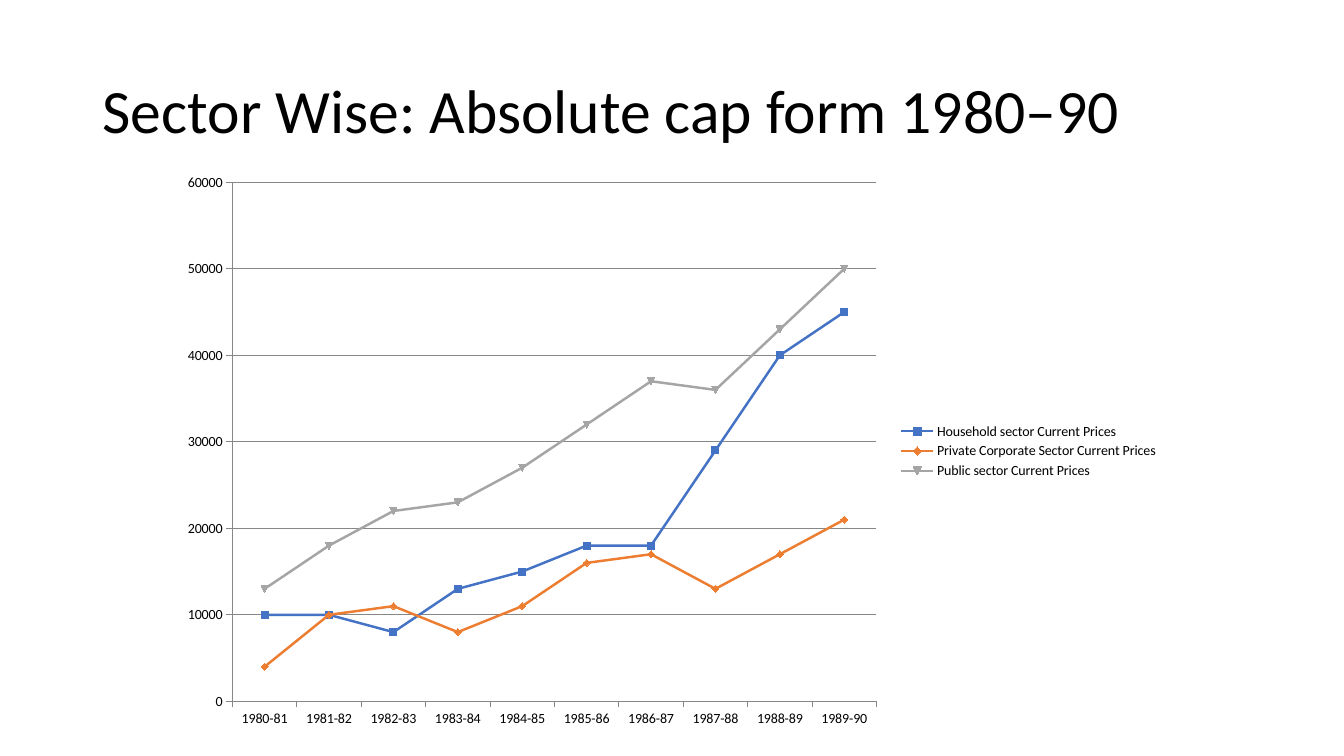
"""Build a slide with a line chart of capital formation by sector, 1980–90."""
import pptx
import pptx.chart.data
import pptx.dml.color
import pptx.enum.chart
import pptx.enum.text
import pptx.oxml
import pptx.util

COLORS = {
    "text": "000000",
    "axis": "878787",
    "household": "4472C4",
    "private": "ED7D31",
    "public": "A5A5A5",
}
FONT = "Calibri"
SECTORS = [
    ("Household sector Current Prices", "household",
     [10000, 10000, 8000, 13000, 15000, 18000, 18000, 29000, 40000, 45000]),
    ("Private Corporate Sector Current Prices", "private",
     [4000, 10000, 11000, 8000, 11000, 16000, 17000, 13000, 17000, 21000]),
    ("Public sector Current Prices", "public",
     [13000, 18000, 22000, 23000, 27000, 32000, 37000, 36000, 43000, 50000]),
]

deck = pptx.Presentation()
deck.slide_width = pptx.util.Inches(13.33)
deck.slide_height = pptx.util.Inches(7.5)
slide = deck.slides.add_slide(deck.slide_layouts[6])


def share(left, top, width, height):
    across, down = deck.slide_width, deck.slide_height
    return [int(part * whole) for part, whole in
            zip((left, top, width, height), (across, down, across, down))]


def add_text(text, box, size, color, anchor, line_spacing):
    frame = slide.shapes.add_textbox(*box).text_frame
    frame.word_wrap = True
    frame.vertical_anchor = anchor
    paragraph = frame.paragraphs[0]
    paragraph.line_spacing = line_spacing
    run = paragraph.add_run()
    run.text = text
    run.font.name = FONT
    run.font.size = pptx.util.Pt(size)
    run.font.color.rgb = pptx.dml.color.RGBColor.from_string(COLORS[color])


add_text("Sector Wise: Absolute cap form 1980–90",
         box=share(0.0690, 0.0533, 0.8627, 0.1933), size=44, color="text",
         anchor=pptx.enum.text.MSO_ANCHOR.MIDDLE, line_spacing=0.9)

formation = pptx.chart.data.CategoryChartData(number_format="0")
formation.categories = [f"{year}-{year % 100 + 1}" for year in range(1980, 1990)]
for name, _, values in SECTORS:
    formation.add_series(name, values)

chart = slide.shapes.add_chart(
    pptx.enum.chart.XL_CHART_TYPE.LINE_MARKERS,
    *share(0.1253, 0.2160, 0.7442, 0.7613), formation).chart
chart.has_title = False
chart.font.name = FONT
chart.font.size = pptx.util.Pt(10)
chart.font.color.rgb = pptx.dml.color.RGBColor.from_string(COLORS["text"])
chart.has_legend = True
chart.legend.position = pptx.enum.chart.XL_LEGEND_POSITION.RIGHT
chart.legend.include_in_layout = False

prices, years = chart.value_axis, chart.category_axis
prices.minimum_scale, prices.maximum_scale, prices.major_unit = 0, 60000, 10000
prices.has_major_gridlines = True
prices.tick_labels.number_format = "0"
prices.tick_labels.number_format_is_linked = False
for rule in (prices, years, prices.major_gridlines):
    rule.format.line.color.rgb = pptx.dml.color.RGBColor.from_string(COLORS["axis"])
    rule.format.line.width = pptx.util.Pt(0.75)
for axis in (prices, years):
    axis.major_tick_mark = pptx.enum.chart.XL_TICK_MARK.OUTSIDE

plot = chart.plots[0]
plot.vary_by_categories = False
for (_, color, _), sector in zip(SECTORS, plot.series):
    hue = pptx.dml.color.RGBColor.from_string(COLORS[color])
    sector.smooth = False
    sector.format.line.width = pptx.util.Pt(1.75)
    sector.format.line.color.rgb = hue
    sector.marker.size = 5
    sector.marker.format.fill.solid()
    sector.marker.format.fill.fore_color.rgb = hue
    sector.marker.format.line.color.rgb = hue

plot_area = chart._chartSpace.chart.plotArea
for old_layout in plot_area.xpath("c:layout"):
    plot_area.remove(old_layout)
plot_area.insert(0, pptx.oxml.parse_xml(
    '<c:layout xmlns:c="http://schemas.openxmlformats.org/drawingml/2006/chart">'
    '<c:manualLayout><c:layoutTarget val="inner"/>'
    '<c:xMode val="edge"/><c:yMode val="edge"/>'
    '<c:x val="0.064"/><c:y val="0.033"/><c:w val="0.644"/><c:h val="0.902"/>'
    '</c:manualLayout></c:layout>'))

deck.save("out.pptx")
